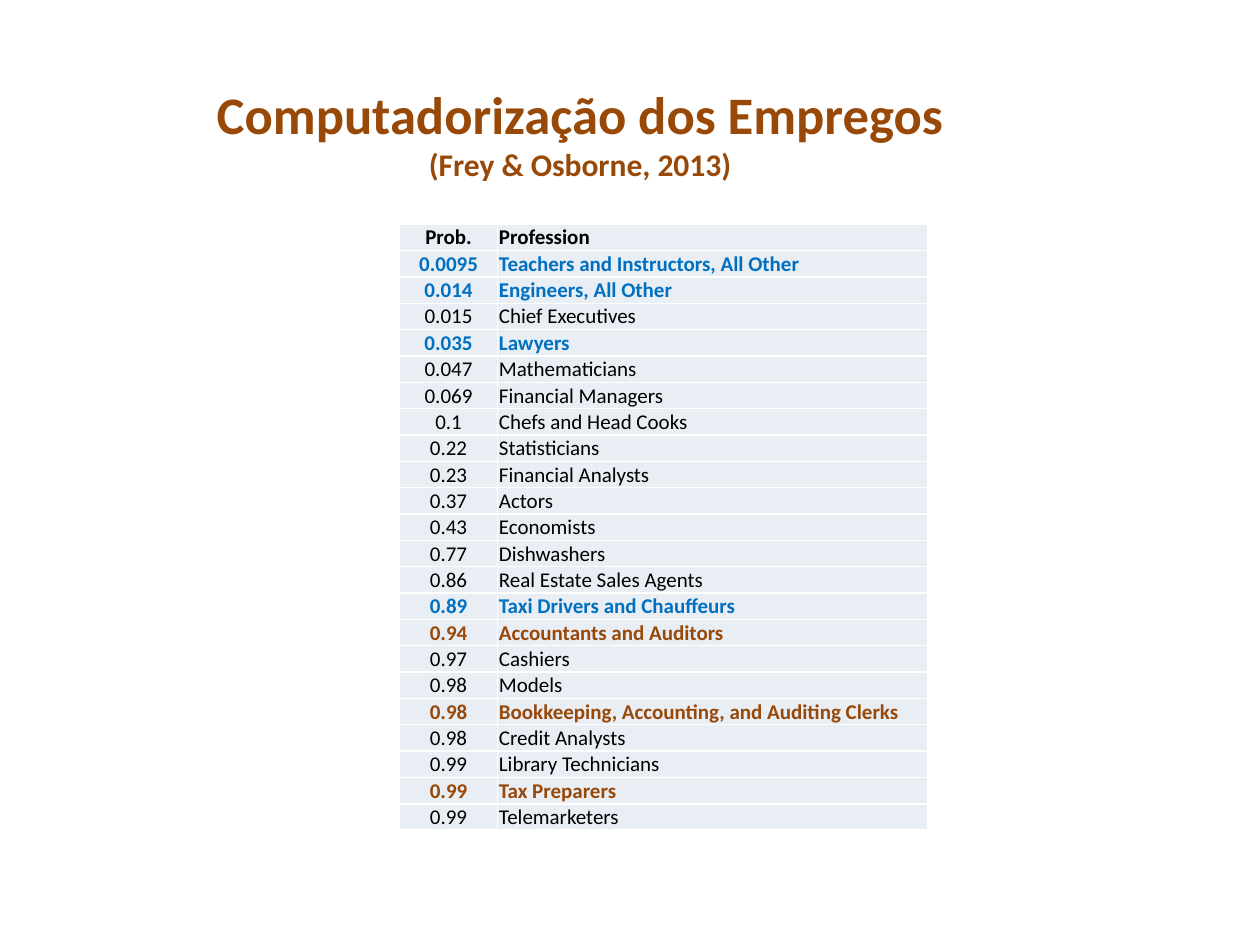
from dataclasses import dataclass
from pptx import Presentation, util as u
from pptx.dml.color import RGBColor
from pptx.enum import text
from pptx.oxml import parse_xml
from pptx.oxml.ns import nsdecls


@dataclass
class Theme:
    face: str = "Calibri"
    brown: str = "984807"
    blue: str = "0070C0"
    ink: str = "000000"
    pale: str = "E9EDF4"
    rule: str = "FFFFFF"
    head: float = 30.1
    sub: float = 18
    body: float = 12


def apply(item, form):
    for key, val in form.items():
        setattr(item, key, val)


class Deck:
    def __init__(self, theme):
        self.theme = theme
        self.file = Presentation()
        apply(self.file, {"slide_width": u.Inches(10), "slide_height": u.Inches(7.5)})
        self.slide = self.file.slides.add_slide(self.file.slide_layouts[6])

    def label(self, para, words, size, color, bold, align):
        run = para.add_run()
        run.text = words
        para.alignment = align
        apply(run.font, {"name": self.theme.face, "size": u.Pt(size), "bold": bold})
        run.font.color.rgb = RGBColor.from_string(color)

    def title(self, box, lines):
        frame = self.slide.shapes.add_textbox(*map(u.Inches, box)).text_frame
        apply(frame, {"word_wrap": False, "auto_size": text.MSO_AUTO_SIZE.SHAPE_TO_FIT_TEXT})
        for num, (words, size) in enumerate(lines):
            para = frame.add_paragraph() if num else frame.paragraphs[0]
            props = para._p.get_or_add_pPr()
            props.set("marL", str(u.Inches(0.38)))
            props.set("indent", "0")
            self.label(para, words, size, self.theme.brown, True, text.PP_ALIGN.CENTER)

    def cell(self, cell, words, color, bold, align):
        apply(cell, {
            "vertical_anchor": text.MSO_ANCHOR.BOTTOM,
            "margin_left": u.Inches(0.01),
            "margin_right": u.Inches(0.01),
            "margin_top": 0,
            "margin_bottom": 0,
        })
        props = cell._tc.get_or_add_tcPr()
        for side in "LRTB":
            props.append(parse_xml(
                f'<a:ln{side} {nsdecls("a")} w="{u.Pt(1)}"><a:solidFill>'
                f'<a:srgbClr val="{self.theme.rule}"/></a:solidFill></a:ln{side}>'))
        cell.fill.solid()
        cell.fill.fore_color.rgb = RGBColor.from_string(self.theme.pale)
        self.label(cell.text_frame.paragraphs[0], words, self.theme.body, color, bold, align)

    def table(self, box, cols, rows, marks):
        grid = self.slide.shapes.add_table(len(rows), len(cols), *map(u.Inches, box)).table
        apply(grid, {"first_row": False, "horz_banding": False})
        for col, width in zip(grid.columns, cols):
            col.width = u.Inches(width)
        for num, (row, pair) in enumerate(zip(grid.rows, rows)):
            row.height = u.Inches(box[3] / len(rows))
            color = marks.get(pair[1], self.theme.ink)
            bold = num == 0 or pair[1] in marks
            for cell, words, align in zip(row.cells, pair, (text.PP_ALIGN.CENTER, text.PP_ALIGN.LEFT)):
                self.cell(cell, words, color, bold, align)


JOBS = [
    ("Prob.", "Profession"),
    ("0.0095", "Teachers and Instructors, All Other"),
    ("0.014", "Engineers, All Other"),
    ("0.015", "Chief Executives"),
    ("0.035", "Lawyers"),
    ("0.047", "Mathematicians"),
    ("0.069", "Financial Managers"),
    ("0.1", "Chefs and Head Cooks"),
    ("0.22", "Statisticians"),
    ("0.23", "Financial Analysts"),
    ("0.37", "Actors"),
    ("0.43", "Economists"),
    ("0.77", "Dishwashers"),
    ("0.86", "Real Estate Sales Agents"),
    ("0.89", "Taxi Drivers and Chauffeurs"),
    ("0.94", "Accountants and Auditors"),
    ("0.97", "Cashiers"),
    ("0.98", "Models"),
    ("0.98", "Bookkeeping, Accounting, and Auditing Clerks"),
    ("0.98", "Credit Analysts"),
    ("0.99", "Library Technicians"),
    ("0.99", "Tax Preparers"),
    ("0.99", "Telemarketers"),
]


def main():
    theme = Theme()
    deck = Deck(theme)
    deck.title((1.22, 0.6, 6.39, 0.91), [
        ("Computadorização dos Empregos", theme.head),
        ("(Frey & Osborne, 2013)", theme.sub),
    ])
    marks = {
        "Teachers and Instructors, All Other": theme.blue,
        "Engineers, All Other": theme.blue,
        "Lawyers": theme.blue,
        "Taxi Drivers and Chauffeurs": theme.blue,
        "Accountants and Auditors": theme.brown,
        "Bookkeeping, Accounting, and Auditing Clerks": theme.brown,
        "Tax Preparers": theme.brown,
    }
    deck.table((3.17, 1.78, 4.19, 4.81), (0.78, 3.41), JOBS, marks)
    deck.file.save("out.pptx")


if __name__ == "__main__":
    main()
